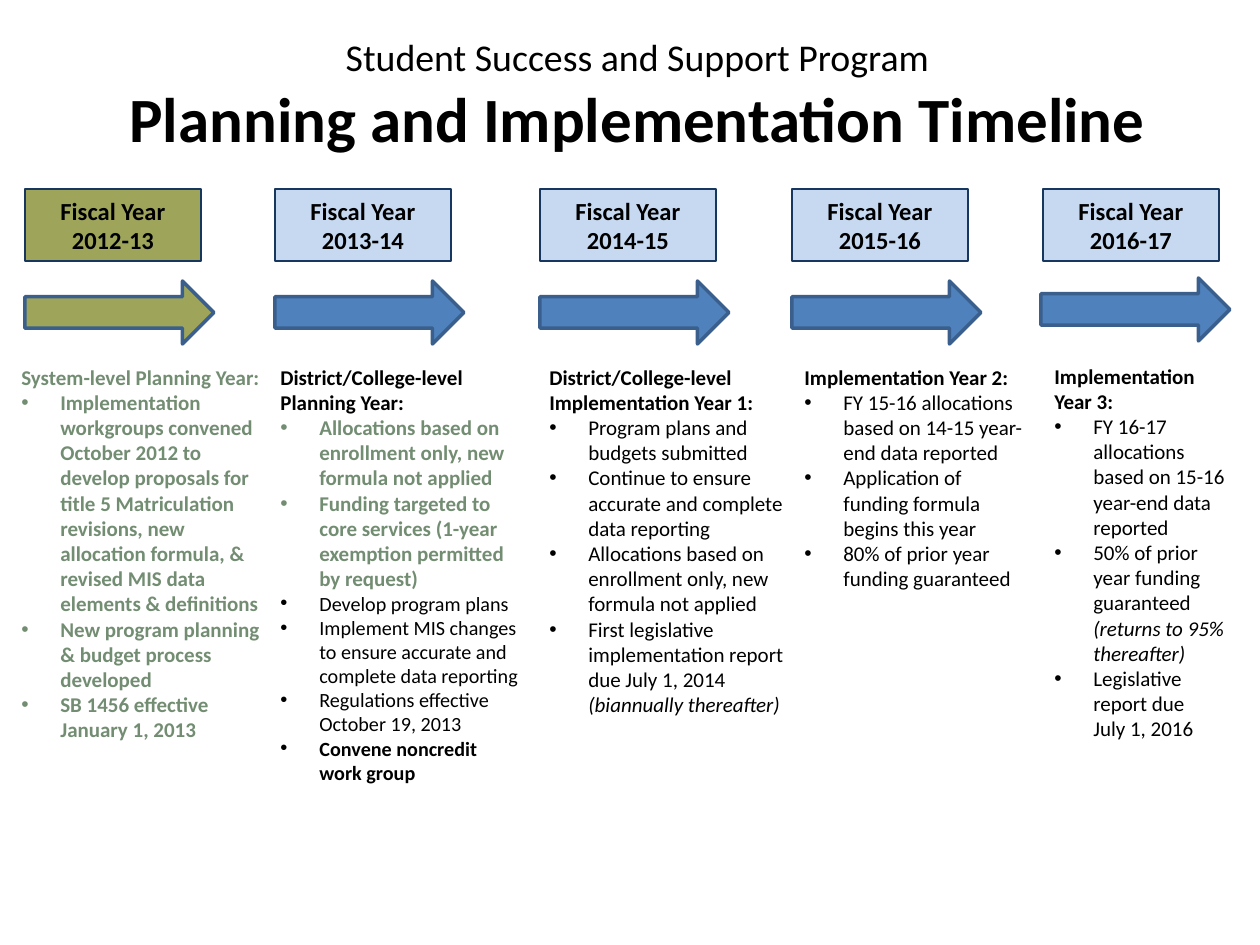
from pptx import Presentation
from pptx import util as u
from pptx.dml.color import RGBColor
from pptx.enum import shapes, text
from pptx.oxml.ns import qn
from lxml import etree

# Content
COLORS = {"black": "000000", "sage": "738D73", "olive": "9EA55B", "sky": "C6D9F1",
          "blue": "4F81BD", "navy": "17375E", "edge": "3A5F8C"}
TITLE = [("Student Success and Support Program", dict(size=21.6)),
         ("Planning and Implementation Timeline", dict(size=36, bold=True))]

# Styles for list text
DONE = dict(color="sage", bold=True)
HEAD = dict(bold=True)
PLAN = dict()
SMALL = dict(size=11.5)
SMALL_BOLD = dict(size=11.5, bold=True)
NOTE = dict(italic=True)

# Each paragraph is a list of (text, style) runs; the first one is the heading
YEARS = [
    dict(year="2012-13", box="olive", arrow="olive", x=25, text_x=9, text_w=267, paras=[
        [("System-level Planning Year:", DONE)],
        [("Implementation workgroups convened October 2012 to develop proposals for "
          "title 5 Matriculation revisions, new allocation formula, & revised MIS data "
          "elements & definitions", DONE)],
        [("New program planning & budget process developed", DONE)],
        [("SB 1456 effective January 1, 2013", DONE)]]),
    dict(year="2013-14", x=275, text_x=268, text_w=267, paras=[
        [("District/College-level Planning Year:", HEAD)],
        [("Allocations based on enrollment only, new formula not applied", DONE)],
        [("Funding targeted to core services (1-year exemption permitted by request)", DONE)],
        [("Develop program plans", SMALL)],
        [("Implement MIS changes to ensure accurate and complete data reporting", SMALL)],
        [("Regulations effective October 19, 2013", SMALL)],
        [("Convene noncredit work group", SMALL_BOLD)]]),
    dict(year="2014-15", x=540, text_x=537, text_w=267, paras=[
        [("District/College-level Implementation Year 1:", HEAD)],
        [("Program plans and budgets submitted", PLAN)],
        [("Continue to ensure accurate and complete data reporting", PLAN)],
        [("Allocations based on enrollment only, new formula not applied", PLAN)],
        [("First legislative implementation report due July 1, 2014 ", PLAN),
         ("(biannually thereafter)", NOTE)]]),
    dict(year="2015-16", x=792, text_x=792, text_w=251, paras=[
        [("Implementation Year 2:", HEAD)],
        [("FY 15-16 allocations based on 14-15 year-end data reported", PLAN)],
        [("Application of funding formula begins this year", PLAN)],
        [("80% of prior year funding guaranteed", PLAN)]]),
    dict(year="2016-17", x=1043, arrow_x=1041, arrow_y=278, text_x=1042, text_y=357,
         text_w=198, paras=[
        [("Implementation Year 3:", HEAD)],
        [("FY 16-17 allocations based on 15-16 year-end data reported", PLAN)],
        [("50% of prior year funding guaranteed ", PLAN),
         ("(returns to 95% thereafter)", NOTE)],
        [("Legislative report due", PLAN), ("\n", PLAN), ("July 1, 2016", PLAN)]]),
]

# Layout in px
BOX_Y, BOX_W, BOX_H = 189, 176, 72
ARROW_Y, ARROW_W, ARROW_H = 281, 189, 63
TEXT_Y, TEXT_H = 358, 430
INDENT = 39


def px(n):
    return u.Emu(int(n * 914400 / 126))


def rgb(name):
    return RGBColor.from_string(COLORS[name])


def add_text(p, content, size=12, color="black", bold=False, italic=False):
    if content == "\n":
        p.add_line_break()
        return
    r = p.add_run()
    r.text = content
    f = r.font
    f.name, f.size, f.bold, f.italic = "Calibri", u.Pt(size), bold, italic
    f.color.rgb = rgb(color)


def add_bullet(p):
    pPr = p._p.get_or_add_pPr()
    pPr.set("marL", str(px(INDENT)))
    pPr.set("indent", str(-px(INDENT)))
    etree.SubElement(pPr, qn("a:buFont")).set("typeface", "Arial")
    etree.SubElement(pPr, qn("a:buChar")).set("char", "•")


def add_block(s, kind, x, y, w, h, fill, line, width):
    sp = s.shapes.add_shape(kind, px(x), px(y), px(w), px(h))
    sp.shadow.inherit = False
    sp.fill.solid()
    sp.fill.fore_color.rgb = rgb(fill)
    sp.line.color.rgb = rgb(line)
    sp.line.width = u.Pt(width)
    return sp


def add_year(s, col):
    # Year box
    sp = add_block(s, shapes.MSO_SHAPE.RECTANGLE, col["x"], BOX_Y, BOX_W, BOX_H,
                   col.get("box", "sky"), "navy", 1.5)
    tf = sp.text_frame
    tf.word_wrap = True
    p = tf.paragraphs[0]
    p.alignment = text.PP_ALIGN.CENTER
    add_text(p, "Fiscal Year " + col["year"], size=14, bold=True)

    # Arrow
    add_block(s, shapes.MSO_SHAPE.RIGHT_ARROW, col.get("arrow_x", col["x"]),
              col.get("arrow_y", ARROW_Y), ARROW_W, ARROW_H,
              col.get("arrow", "blue"), "edge", 2)

    # Heading and bullets
    tf = s.shapes.add_textbox(px(col["text_x"]), px(col.get("text_y", TEXT_Y)),
                              px(col["text_w"]), px(TEXT_H)).text_frame
    tf.word_wrap = True
    for i, runs in enumerate(col["paras"]):
        p = tf.add_paragraph() if i else tf.paragraphs[0]
        if i:
            add_bullet(p)
        for content, style in runs:
            add_text(p, content, **style)


def main():
    prs = Presentation()
    prs.slide_width, prs.slide_height = u.Inches(10), u.Inches(7.5)
    s = prs.slides.add_slide(prs.slide_layouts[5])

    # Title
    title = s.shapes.title
    title.left, title.top, title.width, title.height = px(102), px(21), px(1071), px(147)
    tf = title.text_frame
    tf.vertical_anchor = text.MSO_ANCHOR.MIDDLE
    p = tf.paragraphs[0]
    p.alignment = text.PP_ALIGN.CENTER
    for i, (content, style) in enumerate(TITLE):
        if i:
            p.add_line_break()
        add_text(p, content, **style)

    # Timeline columns
    for col in YEARS:
        add_year(s, col)
    prs.save("out.pptx")


if __name__ == "__main__":
    main()
